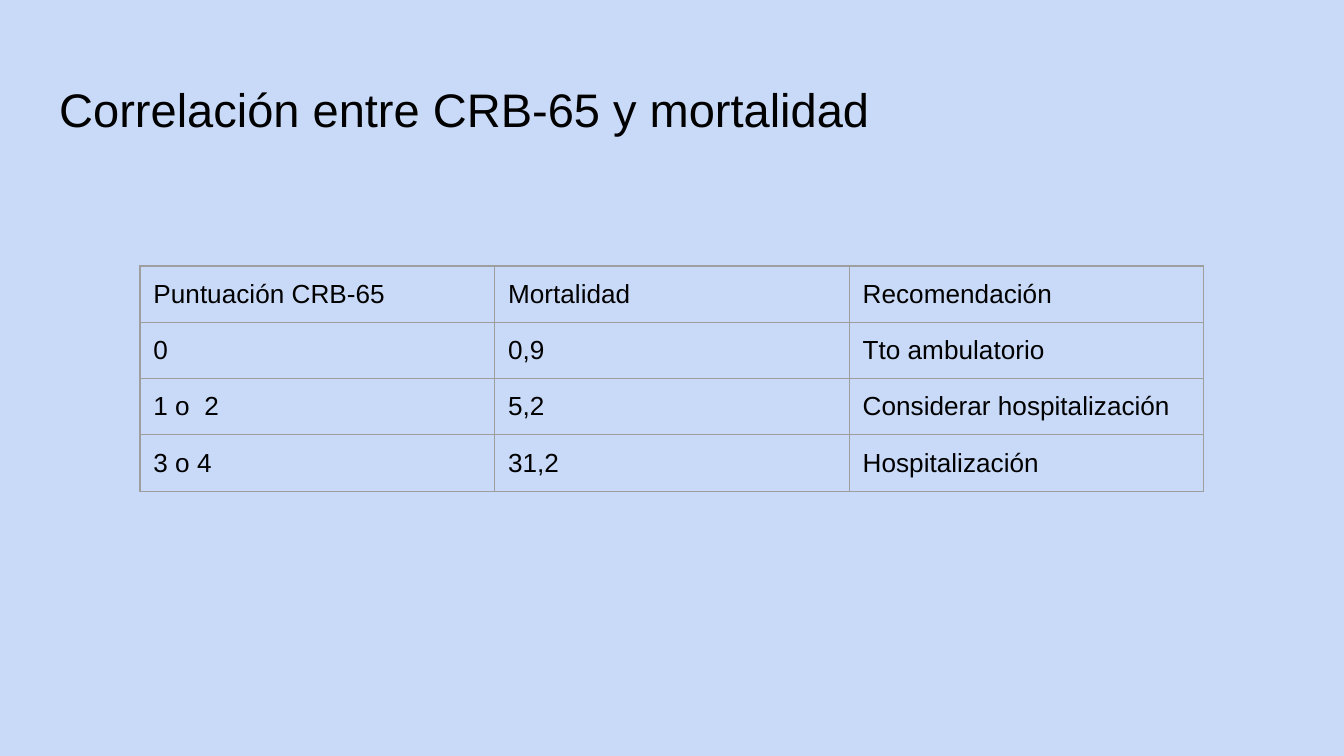
from lxml import etree
from pptx import Presentation
from pptx import util as u
from pptx.dml import color
from pptx.enum import text
from pptx.oxml import ns

FONT = "Arial"
INSET = u.Pt(7.2)
ROWS = [
    ("Puntuación CRB-65", "Mortalidad", "Recomendación"),
    ("0", "0,9", "Tto ambulatorio"),
    ("1 o  2", "5,2", "Considerar hospitalización"),
    ("3 o 4", "31,2", "Hospitalización"),
]


def paint(target, value):
    target.rgb = color.RGBColor.from_string(value)


def set_insets(holder):
    holder.margin_left = holder.margin_right = INSET
    holder.margin_top = holder.margin_bottom = INSET


def add_span(para, words, size):
    para.alignment = text.PP_ALIGN.LEFT
    span = para.add_run()
    span.text = words
    span.font.name = FONT
    span.font.size = u.Pt(size)
    paint(span.font.color, "000000")


def add_borders(cell, value, width):
    properties = cell._tc.get_or_add_tcPr()
    for position, side in enumerate(("lnL", "lnR", "lnT", "lnB")):
        line = etree.Element(ns.qn(f"a:{side}"), w=str(u.Pt(width)))
        fill = etree.SubElement(line, ns.qn("a:solidFill"))
        etree.SubElement(fill, ns.qn("a:srgbClr"), val=value)
        properties.insert(position, line)


def place_title(page, left, top, width, height):
    title = page.shapes.title
    title.left, title.top = u.Pt(left), u.Pt(top)
    title.width, title.height = u.Pt(width), u.Pt(height)
    box = title.text_frame
    box.word_wrap = True
    box.auto_size = text.MSO_AUTO_SIZE.NONE
    box.vertical_anchor = text.MSO_ANCHOR.BOTTOM
    set_insets(box)
    add_span(box.paragraphs[0], "Correlación entre CRB-65 y mortalidad", 25.2)


def place_mortality_table(page, left, top, width, height):
    frame = page.shapes.add_table(
        len(ROWS), len(ROWS[0]), u.Pt(left), u.Pt(top), u.Pt(width), u.Pt(height)
    )
    table = frame.table
    table.first_row = False
    table.horz_banding = False
    for row, words in enumerate(ROWS):
        for column, entry in enumerate(words):
            cell = table.cell(row, column)
            cell.fill.background()
            cell.vertical_anchor = text.MSO_ANCHOR.TOP
            set_insets(cell)
            add_borders(cell, "9E9E9E", 0.75)
            add_span(cell.text_frame.paragraphs[0], entry, 14)


def main():
    deck = Presentation()
    deck.slide_width, deck.slide_height = u.Pt(720), u.Pt(405)
    page = deck.slides.add_slide(deck.slide_layouts[5])
    background = page.background.fill
    background.solid()
    paint(background.fore_color, "C9DAF8")
    place_title(page, 24.5, 35.3, 671, 45.4)
    place_mortality_table(page, 75, 142.5, 570, 120)
    deck.save("out.pptx")


if __name__ == "__main__":
    main()
